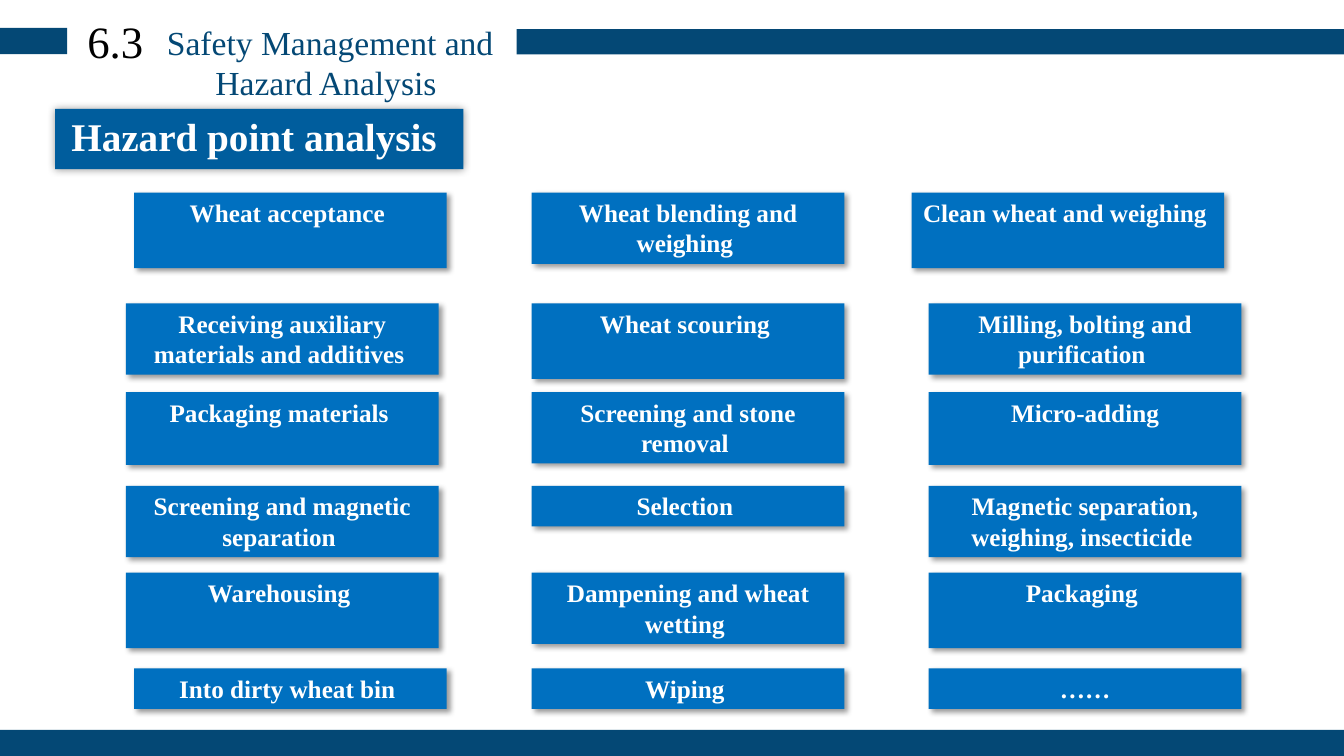
from dataclasses import dataclass

from lxml.etree import SubElement
from pptx import Presentation
from pptx.dml.color import RGBColor
from pptx.enum.shapes import MSO_SHAPE
from pptx.enum.text import MSO_ANCHOR, PP_ALIGN
from pptx.oxml.ns import qn
from pptx.util import Pt


@dataclass(frozen=True)
class Theme:
    font: str = "Times New Roman"
    navy: str = "044875"
    blue: str = "005D9D"
    step: str = "0070C0"
    white: str = "FFFFFF"
    black: str = "000000"
    number: int = 32
    title: int = 24
    head: int = 28
    label: int = 18


THEME = Theme()
WIDE, HIGH = 960, 540

# Columns: left edge, then (text, height, sideways shift) for each row
ROWS = (137.5, 216.7, 280.1, 347, 409, 477.4)
STEPS = (
    (90, (("Wheat acceptance ", 54, 5.8),
          ("Receiving auxiliary materials and additives ", 51, 0),
          ("Packaging materials ", 52, 0),
          ("Screening and magnetic separation ", 51, 0),
          ("Warehousing ", 54, 0),
          ("Into dirty wheat bin ", 29, 5.8))),
    (379.8, (("Wheat blending and weighing ", 51, 0),
             ("Wheat scouring ", 54, 0),
             ("Screening and stone removal ", 51, 0),
             ("Selection ", 29, 0),
             ("Dampening and wheat wetting ", 51, 0),
             ("Wiping ", 29, 0))),
    (663.4, (("Clean wheat and weighing ", 54, -12.2),
             ("Milling, bolting and purification ", 51, 0),
             ("Micro-adding", 52, 0),
             ("Magnetic separation, weighing, insecticide ", 51, 0),
             ("Packaging ", 54, 0),
             ("……", 29, 0))),
)


def add_rect(slide, box, fill):
    rect = slide.shapes.add_shape(MSO_SHAPE.RECTANGLE, *map(Pt, box))
    rect.shadow.inherit = False
    rect.fill.solid()
    rect.fill.fore_color.rgb = RGBColor.from_string(fill)
    rect.line.fill.background()
    return rect


def add_shade(shape, blur, dist, angle):
    effects = shape._element.spPr.find(qn("a:effectLst"))
    shade = SubElement(effects, qn("a:outerShdw"), blurRad=str(Pt(blur)),
                       dist=str(Pt(dist)), dir=str(angle * 60000),
                       algn="ctr", rotWithShape="0")
    color = SubElement(shade, qn("a:srgbClr"), val=THEME.black)
    SubElement(color, qn("a:alpha"), val="40000")


def set_text(shape, text, size, color, bold=False, anchor=MSO_ANCHOR.TOP):
    frame = shape.text_frame
    frame.word_wrap = True
    frame.vertical_anchor = anchor
    para = frame.paragraphs[0]
    para.text = text
    para.alignment = PP_ALIGN.CENTER
    font = para.font
    font.name, font.size, font.bold = THEME.font, Pt(size), bold
    font.color.rgb = RGBColor.from_string(color)


def add_text(slide, box, *style, **more):
    set_text(slide.shapes.add_textbox(*map(Pt, box)), *style, **more)


def draw_header(slide, left, top, width):
    # Bars on both sides of the section title
    add_rect(slide, (left, top + 20, 48, 18.7), THEME.navy)
    add_rect(slide, (left + 369, top + 20.9, width - 369, 18), THEME.navy)
    add_text(slide, (left + 103, top + 12.2, 265.7, 65.5),
             "Safety Management and Hazard Analysis ", THEME.title, THEME.navy)
    add_text(slide, (left + 48.2, top + 6.5, 68.4, 46), "6.3",
             THEME.number, THEME.black)


def draw_head(slide, left, top, width, height):
    band = add_rect(slide, (left, top, width, height), THEME.blue)
    add_shade(band, 6, 0, 90)
    add_text(slide, (left - 0.5, top - 2.9, width + 0.5, height + 1.6),
             "Hazard point analysis ", THEME.head, THEME.white,
             bold=True, anchor=MSO_ANCHOR.MIDDLE)


def draw_steps(slide, left, width, cells):
    for top, (text, height, shift) in zip(ROWS, cells):
        card = add_rect(slide, (left + shift, top, width, height), THEME.step)
        add_shade(card, 4, 3, 45)
        set_text(card, text, THEME.label, THEME.white, bold=True)


def draw_footer(slide, top):
    add_rect(slide, (0, top, WIDE, HIGH - top), THEME.navy)


def main():
    deck = Presentation()
    deck.slide_width, deck.slide_height = Pt(WIDE), Pt(HIGH)
    slide = deck.slides.add_slide(deck.slide_layouts[6])
    draw_footer(slide, 521.3)
    draw_header(slide, 0, 0, WIDE)
    draw_head(slide, 39.4, 77.8, 291.6, 43)
    for left, cells in STEPS:
        draw_steps(slide, left, 223.3, cells)
    deck.save("out.pptx")


if __name__ == "__main__":
    main()
